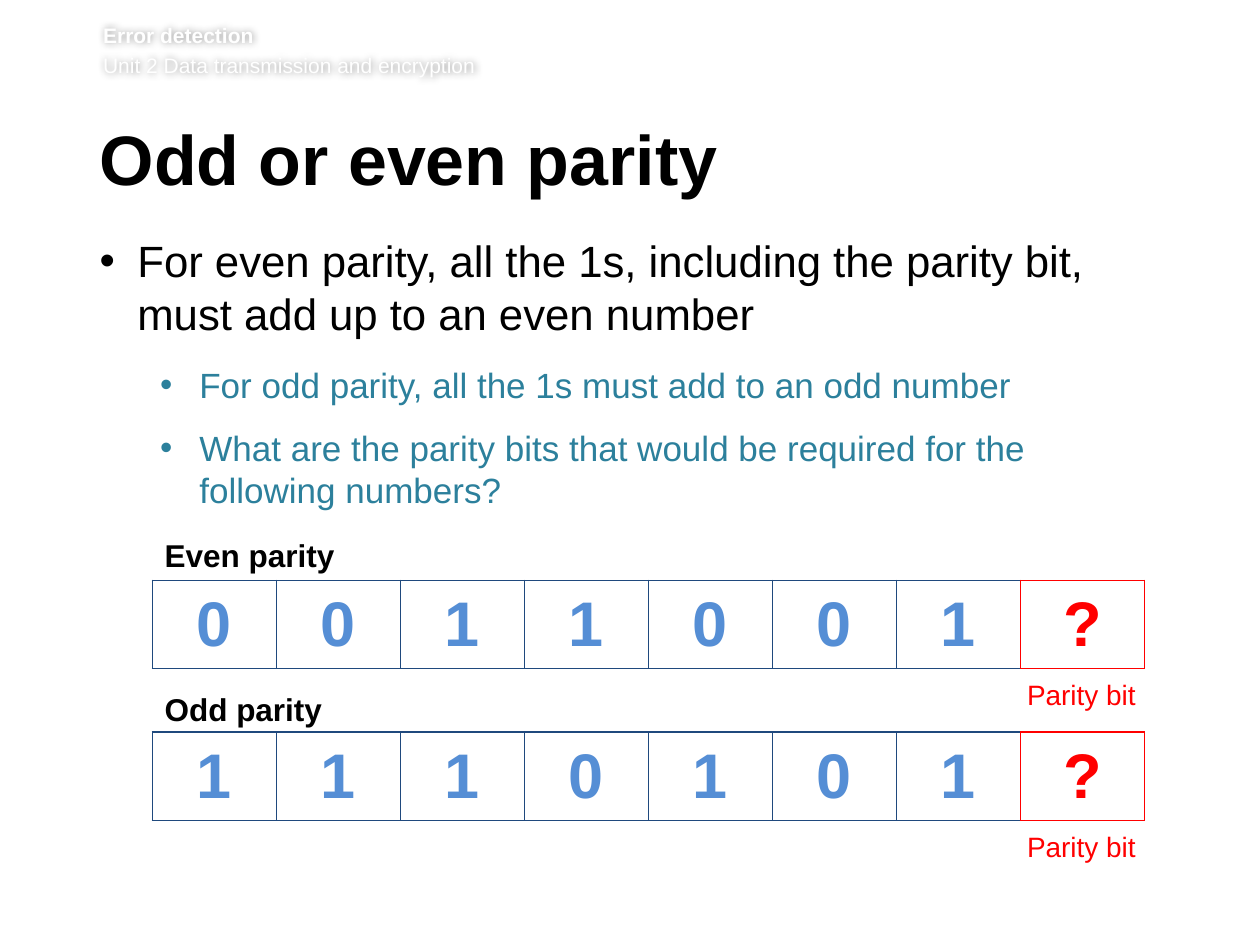
import pptx
import pptx.dml.color
import pptx.enum.text
import pptx.oxml
import pptx.oxml.ns
import pptx.util
from dataclasses import dataclass
from pptx.util import Cm, Pt


@dataclass(frozen=True)
class Theme:
    font: str = "Arial"
    black: str = "000000"
    white: str = "FFFFFF"
    teal: str = "2C809C"
    bit: str = "558ED5"
    grid: str = "1F497D"
    red: str = "FF0000"
    header: int = 12
    title: int = 40
    body: int = 25
    sub: int = 20
    label: int = 18
    note: int = 16
    digit: int = 36


T = Theme()
CENTER = pptx.enum.text.PP_ALIGN.CENTER


def add_xml(parent, xml):
    el = pptx.oxml.parse_xml(xml.replace(">", f" {pptx.oxml.ns.nsdecls('a')}>", 1))
    parent.append(el)


def write(p, text, size, color=T.black, bold=False, align=None,
          before=None, after=None, line=None):
    r = p.add_run()
    r.text = text
    r.font.name = T.font
    r.font.size = Pt(size)
    r.font.bold = bold
    r.font.color.rgb = pptx.dml.color.RGBColor.from_string(color)
    if align is not None:
        p.alignment = align
    if before is not None:
        p.space_before = Pt(before)
    if after is not None:
        p.space_after = Pt(after)
    if line is not None:
        p.line_spacing = Pt(line)


def add_box(s, x, y, w, h, insets=(0.25, 0.13, 0.25, 0.13)):
    sp = s.shapes.add_textbox(Cm(x), Cm(y), Cm(w), Cm(h))
    tf = sp.text_frame
    tf.word_wrap = True
    tf.margin_left, tf.margin_top, tf.margin_right, tf.margin_bottom = map(Cm, insets)
    return sp


def add_bullet(p, left, hang):
    pPr = p._p.get_or_add_pPr()
    pPr.set("marL", str(Cm(left)))
    pPr.set("indent", str(-Cm(hang)))
    add_xml(pPr, '<a:buFont typeface="Arial"/>'.replace("/>", "></a:buFont>"))
    add_xml(pPr, '<a:buChar char="•"></a:buChar>')


def add_header(s, x, y, w, h):
    sp = add_box(s, x, y, w, h, (0, 0, 0, 0.13))
    add_xml(sp._element.spPr,
            '<a:effectLst><a:outerShdw blurRad="50800" dist="0" algn="ctr">'
            '<a:srgbClr val="000000"><a:alpha val="40000"/></a:srgbClr>'
            '</a:outerShdw></a:effectLst>')
    tf = sp.text_frame
    write(tf.paragraphs[0], "Error detection", T.header, T.white, bold=True)
    write(tf.add_paragraph(), "Unit 2 Data transmission and encryption",
          T.header, T.white, before=2.9)


def add_title(s, x, y, w, h):
    tf = add_box(s, x, y, w, h, (0, 0.13, 0.25, 0.13)).text_frame
    write(tf.paragraphs[0], "Odd or even parity", T.title, bold=True, line=39)


def add_body(s, x, y, w, h):
    tf = add_box(s, x, y, w, h, (0, 0, 0.25, 0.13)).text_frame
    p = tf.paragraphs[0]
    add_bullet(p, 0.76, 0.76)
    write(p, "For even parity, all the 1s, including the parity bit, "
          "must add up to an even number", T.body, after=14)
    for text in ("For odd parity, all the 1s must add to an odd number",
                 "What are the parity bits that would be required "
                 "for the following numbers?"):
        p = tf.add_paragraph()
        p.level = 1
        add_bullet(p, 2.01, 0.79)
        write(p, text, T.sub, T.teal, after=12)


def set_borders(cell, **colors):
    tcPr = cell._tc.get_or_add_tcPr()
    for side in "LRTB":
        add_xml(tcPr, f'<a:ln{side} w="12700"><a:solidFill><a:srgbClr '
                f'val="{colors.get(side, T.grid)}"/></a:solidFill></a:ln{side}>')


def add_parity_row(s, x, y, w, h, label, bits, label_dy):
    tf = add_box(s, x, y + label_dy, 5.84, 1.02).text_frame
    write(tf.paragraphs[0], label, T.label, bold=True)

    n = len(bits)
    table = s.shapes.add_table(1, n, Cm(x), Cm(y), Cm(w), Cm(h)).table
    table.first_row = table.horz_banding = False
    for i, bit in enumerate(bits):
        table.columns[i].width = Cm(w / n)
        cell = table.cell(0, i)
        cell.vertical_anchor = pptx.enum.text.MSO_ANCHOR.MIDDLE
        parity = i == n - 1
        if parity:
            set_borders(cell, **dict.fromkeys("LRTB", T.red))
        elif i == n - 2:
            set_borders(cell, R=T.red)
        else:
            set_borders(cell)
        cell.fill.background()
        write(cell.text_frame.paragraphs[0], bit, T.digit,
              T.red if parity else T.bit, bold=True, align=CENTER)

    tf = add_box(s, x + w - 2.87, y + 1.83, 3.2, 0.94).text_frame
    write(tf.paragraphs[0], "Parity bit", T.note, T.red, align=CENTER)


def main():
    prs = pptx.Presentation()
    prs.slide_width, prs.slide_height = Cm(25.4), Cm(19.05)
    s = prs.slides.add_slide(prs.slide_layouts[6])
    add_header(s, 2.08, 0.45, 22.4, 1.24)
    add_title(s, 2.01, 2.51, 21.72, 1.85)
    add_body(s, 2.01, 4.72, 21.67, 9.6)
    add_parity_row(s, 3.07, 11.7, 20, 1.78, "Even parity", "0011001?", -1.03)
    add_parity_row(s, 3.07, 14.76, 20, 1.67, "Odd parity", "1110101?", -0.97)
    prs.save("out.pptx")


if __name__ == "__main__":
    main()
